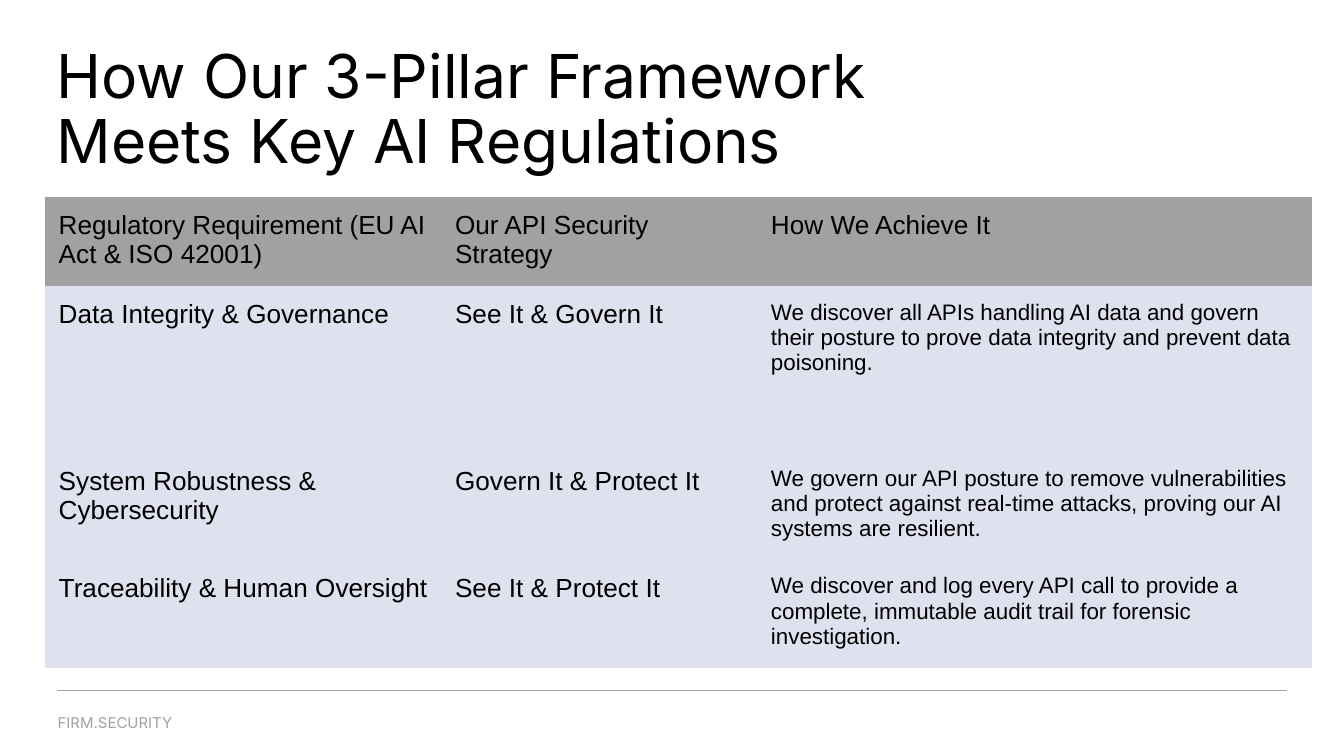
from lxml.etree import SubElement
from pptx import Presentation
from pptx.dml.color import RGBColor
from pptx.enum.shapes import MSO_CONNECTOR
from pptx.enum.text import MSO_ANCHOR
from pptx.oxml.ns import qn
from pptx.util import Cm, Pt

BLACK, GREY, EDGE, PALE = "000000", "A1A1A1", "9E9E9E", "DFE2EE"
INSET = 0.25
COLS = [7.49, 5.97, 10.46]
ROWS = [1.57, 3.15, 1.57, 1.57]
CELLS = [
    ("Regulatory Requirement (EU AI Act & ISO 42001)",
     "Our API Security Strategy",
     "How We Achieve It"),
    ("Data Integrity & Governance",
     "See It & Govern It",
     "We discover all APIs handling AI data and govern their posture "
     "to prove data integrity and prevent data poisoning."),
    ("System Robustness & Cybersecurity",
     "Govern It & Protect It",
     "We govern our API posture to remove vulnerabilities and protect "
     "against real-time attacks, proving our AI systems are resilient."),
    ("Traceability & Human Oversight",
     "See It & Protect It",
     "We discover and log every API call to provide a complete, "
     "immutable audit trail for forensic investigation."),
]


def rgb(color):
    return RGBColor.from_string(color)


def set_margins(box, inset):
    box.margin_left = box.margin_right = Cm(inset)
    box.margin_top = box.margin_bottom = Cm(inset)


def write(tf, text, size, font, color):
    p = tf.paragraphs[0]
    p.text = text
    p.font.size = Pt(size)
    p.font.name = font
    p.font.color.rgb = rgb(color)
    SubElement(p._p, qn("a:endParaRPr"), sz=str(round(size * 100)))
    return p


def add_text(s, x, y, w, h, inset, *style):
    tf = s.shapes.add_textbox(Cm(x), Cm(y), Cm(w), Cm(h)).text_frame
    tf.word_wrap = True
    set_margins(tf, inset)
    return tf, write(tf, *style)


def add_borders(cell, colors):
    tcPr = cell._tc.get_or_add_tcPr()
    for side, color in zip("LRTB", colors):
        ln = SubElement(tcPr, qn(f"a:ln{side}"), w=str(Pt(0.75)))
        fill = SubElement(ln, qn("a:solidFill"))
        SubElement(fill, qn("a:srgbClr"), val=color)


def add_title(s, x, y, w, h):
    text = "How Our 3-Pillar Framework Meets Key AI Regulations"
    tf, p = add_text(s, x, y, w, h, 0, text, 32.4, "Inter", BLACK)
    p.line_spacing = 0.9


def add_regulation_table(s, x, y, w, h):
    table = s.shapes.add_table(
        len(ROWS), len(COLS), Cm(x), Cm(y), Cm(w), Cm(h)).table
    for col, width in zip(table.columns, COLS):
        col.width = Cm(width)
    for i, (row, height) in enumerate(zip(table.rows, ROWS)):
        row.height = Cm(height)
        for j, cell in enumerate(row.cells):
            header = i == 0
            set_margins(cell, INSET)
            add_borders(cell, [EDGE] * 3 + [PALE] if header else [PALE] * 4)
            cell.fill.solid()
            cell.fill.fore_color.rgb = rgb(GREY if header else PALE)
            size = 12 if j == 2 and not header else 14
            write(cell.text_frame, CELLS[i][j], size, "Arial", BLACK)


def add_footer(s, x, y, w, h):
    line = s.shapes.add_connector(
        MSO_CONNECTOR.STRAIGHT, Cm(x), Cm(y), Cm(x + w), Cm(y))
    line.line.color.rgb = rgb(GREY)
    line.line.width = Pt(0.75)
    SubElement(line._element.spPr, qn("a:effectLst"))
    tf, _ = add_text(s, x - 0.23, y + 0.18, 8.33, h - 0.18, INSET,
                     "FIRM.SECURITY", 8, "Inter", GREY)
    tf.vertical_anchor = MSO_ANCHOR.MIDDLE


def main():
    prs = Presentation()
    prs.slide_width, prs.slide_height = Cm(25.4), Cm(14.29)
    s = prs.slides.add_slide(prs.slide_layouts[6])
    add_footer(s, 1.07, 13.05, 23.26, 1.04)
    add_title(s, 1.07, 0.87, 15.7, 3.1)
    add_regulation_table(s, 0.86, 3.73, sum(COLS), sum(ROWS))
    prs.save("out.pptx")


if __name__ == "__main__":
    main()
